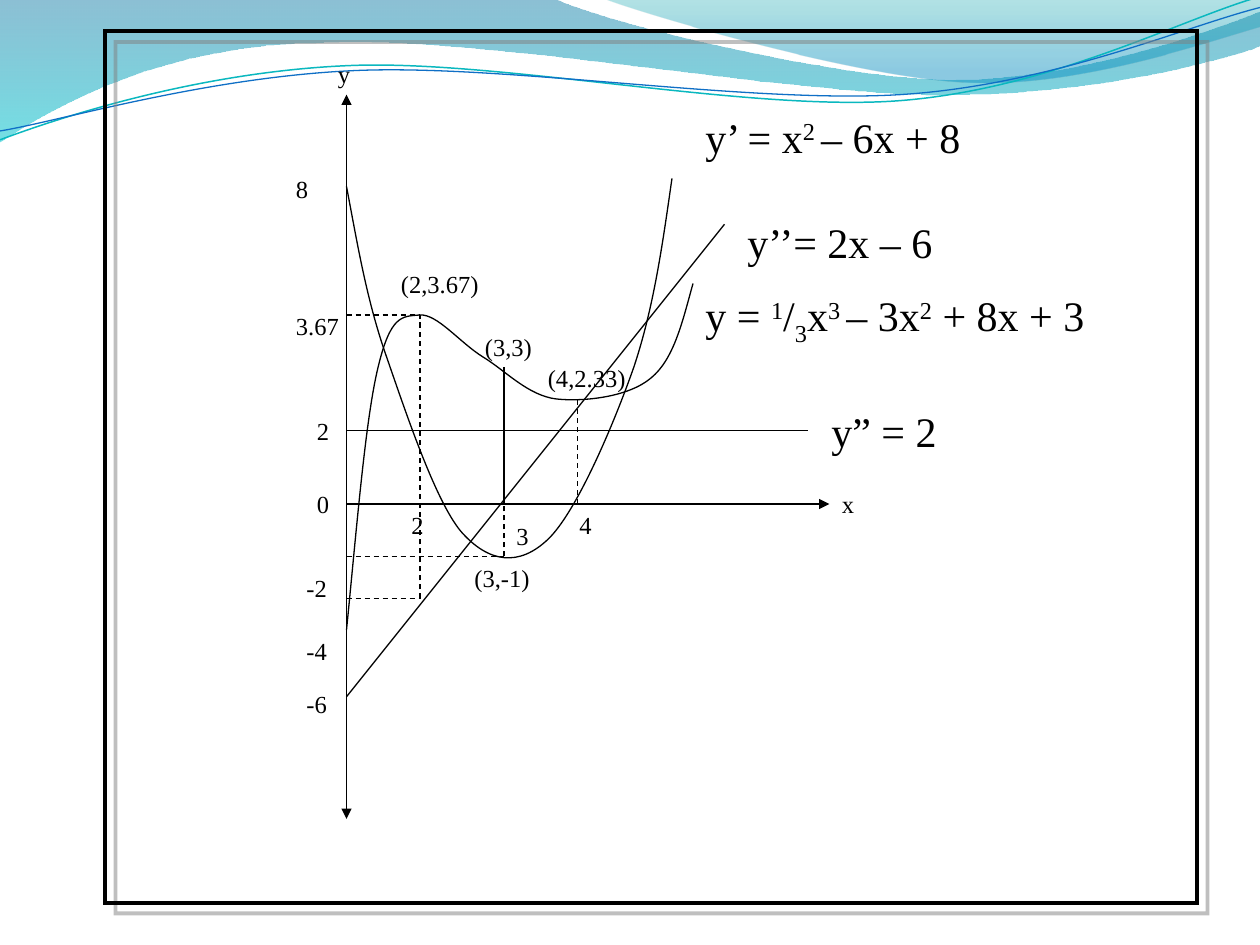
import math
import pptx
import pptx.util
import pptx.dml.color
import pptx.enum.dml
import pptx.enum.shapes
import pptx.enum.text
import pptx.oxml
import pptx.oxml.ns

Pt = pptx.util.Pt
RGB = pptx.dml.color.RGBColor.from_string
qn = pptx.oxml.ns.qn
space = pptx.oxml.ns.nsdecls("a")
theme = {
    "ink": "000000", "shade": "808080", "teal": "0AB8BF", "blue": "0F6FC6",
    "wave": [("0074A1", 0, 45), ("00C6CF", 1, 55)],
    "crest": [("00A1A9", 0, 30), ("008BBF", 0.8, 45)],
    "thin": 0.75, "thick": 2.25, "small": 14, "large": 24,
}
face = {"name": "Times New Roman", "bold": False, "italic": False}


def cm(inch):
    """Turn inches into a length, snapped to the grid of twelfths when close."""
    grid = round(inch * 12) / 12
    snap = grid if abs(grid - inch) < 0.004 else inch
    return pptx.util.Cm(round(snap * 2.54, 5) + 0.00001)


def trace(start, parts, closed=False, turn=0, mid=(0, 0)):
    """Outline of lines (2 numbers) and Bezier curves (6 numbers), turned about mid."""
    spots = [start] + [part[i:i + 2] for part in parts for i in range(0, len(part), 2)]
    c, s = math.cos(math.radians(turn)), math.sin(math.radians(turn))
    spots = [(cm(mid[0] + (x - mid[0]) * c + (y - mid[1]) * s),
              cm(mid[1] - (x - mid[0]) * s + (y - mid[1]) * c)) for x, y in spots]
    pen = slide.shapes.build_freeform(*spots[0])
    pen.add_line_segments(spots[1:], close=closed)
    shape = pen.convert_to_shape()
    shape.shadow.inherit = False
    shape.rotation = turn
    legs = iter(list(shape._element.iter(qn("a:lnTo"))))
    for part in parts:
        group = [next(legs) for i in range(0, len(part), 2)]
        if len(group) == 3:
            bend = pptx.oxml.parse_xml(f"<a:cubicBezTo {space}/>")
            group[0].addprevious(bend)
            for leg in group:
                bend.append(leg[0])
                leg.getparent().remove(leg)
    return shape


deck = pptx.Presentation()
deck.slide_width, deck.slide_height = cm(10), cm(7.5)
slide = deck.slides.add_slide(deck.slide_layouts[6])

# Filled waves along the top
waves = [
    ("wave", (0, -0.01), [
        (4.4, -0.01), (4.76, 0.17, 6.64, 0.63, 7.58, 0.63),
        (8.53, 0.63, 9.58, 0.26, 10, 0.09), (10.01, 0.36),
        (9.83, 0.44, 8.7, 0.76, 7.46, 0.75), (6.22, 0.75, 3.82, 0.28, 2.57, 0.34),
        (1.29, 0.35, 0.46, 0.83, -0.01, 1.13), (0, -0.01)]),
    ("crest", (4.79, -0.01), [
        (5.09, 0.11, 6.82, 0.62, 7.69, 0.65), (8.56, 0.69, 9.61, 0.32, 10, 0.21),
        (10, 0), (4.79, -0.01)]),
]
for tone, start, parts in waves:
    shape = trace(start, parts, True)
    shape.line.fill.background()
    shape.fill.gradient()
    shape.fill.gradient_angle = 270
    nodes = shape._element.spPr.iter(qn("a:gs"))
    for stop, node, (hue, place, alpha) in zip(shape.fill.gradient_stops, nodes, theme[tone]):
        stop.color.rgb = RGB(hue)
        stop.position = place
        node[0].append(pptx.oxml.parse_xml(f'<a:alpha {space} val="{alpha * 1000}"/>'))

# Wave lines and plotted curves
curves = [
    ("teal", 0.85, -2.7, (4.99, 0.58), (0, 1.11), [
        (0.48, 0.93, 1.58, 0.57, 2.77, 0.52), (3.95, 0.47, 5.93, 0.89, 7.13, 0.8),
        (8.33, 0.71, 9.38, 0.15, 9.98, -0.02)]),
    ("blue", 0.75, -2.7, (5, 0.59), (0, 1.04), [
        (0.47, 0.96, 1.64, 0.61, 2.83, 0.56), (4.03, 0.51, 5.97, 0.83, 7.17, 0.75),
        (8.36, 0.67, 9.41, 0.21, 10, 0.06)]),
    ("ink", theme["thin"], 0, (0, 0), (2.75, 1.48), [
        (2.83, 1.91, 2.9, 2.33, 3.05, 2.78), (3.21, 3.24, 3.45, 3.97, 3.66, 4.22),
        (3.88, 4.47, 4.12, 4.5, 4.35, 4.28), (4.57, 4.07, 4.86, 3.4, 5.03, 2.92),
        (5.19, 2.44, 5.26, 1.93, 5.33, 1.42)]),
    ("ink", theme["thin"], 0, (0, 0), (2.75, 5), [
        (2.83, 4.17, 2.9, 3.33, 3, 2.92), (3.1, 2.5, 3.19, 2.51, 3.33, 2.5),
        (3.47, 2.49, 3.65, 2.72, 3.83, 2.83), (4.01, 2.94, 4.19, 3.14, 4.42, 3.17),
        (4.64, 3.19, 4.99, 3.15, 5.17, 3), (5.35, 2.85, 5.42, 2.55, 5.5, 2.25)]),
]
for tone, width, turn, mid, start, parts in curves:
    shape = trace(start, parts, False, turn, mid)
    shape.fill.background()
    shape.line.color.rgb = RGB(theme[tone])
    shape.line.width = Pt(width)

# Axes, straight graphs and dashed guides
left, base = 2.75, 4
lines = [
    ((left, base), (6.58, base), "tail"),
    ((left, 0.75), (left, 6.5), "head tail"),
    ((left, 5.53), (5.75, 1.78), ""),
    ((left, 3.42), (6.42, 3.42), ""),
    ((4, base), (4, 2.92), ""),
    ((4, 4.42), (4, base), "dash"),
    ((left, 4.42), (4, 4.42), "dash"),
    ((left, 4.75), (3.33, 4.75), "dash"),
    ((3.33, 4.75), (3.33, 2.5), "dash"),
    ((left, 2.5), (3.33, 2.5), "dash"),
    ((4.58, base), (4.58, 3.17), "dash"),
]
for start, end, style in lines:
    link = slide.shapes.add_connector(
        pptx.enum.shapes.MSO_CONNECTOR.STRAIGHT, *map(cm, start + end))
    link.line.color.rgb = RGB(theme["ink"])
    link.line.width = Pt(theme["thin"])
    if style == "dash":
        link.line.dash_style = pptx.enum.dml.MSO_LINE.DASH
    spot = link._element.spPr
    for side in ("head", "tail"):
        if side in style:
            spot.find(qn("a:ln")).append(pptx.oxml.parse_xml(
                f'<a:{side}End {space} type="triangle"/>'))
    spot.append(pptx.oxml.parse_xml(f"<a:effectLst {space}/>"))

# Labels and formulas: a run is a text, or a text with its baseline shift
small = [
    (4, 4.08, 0.25, "3"), (3.17, 4, 0.25, "2"), (4.5, 4, 0.25, "4"),
    (2.33, 5, 0.42, "-4"), (2.33, 5.42, 0.42, "-6"), (2.33, 4.5, 0.42, "-2"),
    (2.42, 3.25, 0.33, "2"), (2.42, 3.83, 0.33, "0"), (2.25, 1.33, 0.42, "8"),
    (2.25, 2.42, 0.67, "3.67"), (6.58, 3.83, 0.25, "x"), (2.58, 0.42, 0.25, "y"),
    (3.67, 4.42, 0.67, "(3,-1)"), (3.75, 2.58, 0.67, "(3,3)"),
    (3.08, 2.08, 1.08, "(2,3.67)"), (4.25, 2.83, 0.92, "(4,2.33)"),
]
large = [
    (6.5, 3.17, 1.08, "y” = 2"),
    (5.83, 1.67, 1.75, "y’’= 2x – 6"),
    (5.5, 0.83, 2.5, "y’ = x", ("2 ", 30), "– 6x + 8"),
    (5.5, 2.25, 4, "y = ", ("1", 30), "/", ("3", -25), "x", ("3 ", 30),
     "– 3x", ("2", 30), " + 8x + 3"),
]
for size, tall, group in (("small", 0.33, small), ("large", 0.5, large)):
    for x, y, wide, *runs in group:
        frame = slide.shapes.add_textbox(cm(x), cm(y), cm(wide), cm(tall)).text_frame
        frame.word_wrap = True
        frame.auto_size = pptx.enum.text.MSO_AUTO_SIZE.SHAPE_TO_FIT_TEXT
        for piece in runs:
            words, shift = (piece, 0) if isinstance(piece, str) else piece
            run = frame.paragraphs[0].add_run()
            run.text = words
            for key, value in {**face, "size": Pt(theme[size])}.items():
                setattr(run.font, key, value)
            run.font.color.rgb = RGB(theme["ink"])
            if shift:
                run._r.get_or_add_rPr().set("baseline", str(shift * 1000))

# Frame with sharp corners and an offset shadow
box = slide.shapes.add_shape(
    pptx.enum.shapes.MSO_SHAPE.RECTANGLE, *map(cm, (0.83, 0.25, 8.67, 6.92)))
box.fill.background()
box.line.color.rgb = RGB(theme["ink"])
box.line.width = Pt(theme["thick"])
box._element.spPr.find(qn("a:ln")).append(
    pptx.oxml.parse_xml(f'<a:miter {space} lim="800000"/>'))
box.shadow.inherit = False
box._element.spPr.find(qn("a:effectLst")).append(pptx.oxml.parse_xml(
    f'<a:outerShdw {space} dist="{Pt(8.5)}" dir="2700000" '
    f'algn="ctr" rotWithShape="0"><a:srgbClr val="{theme["shade"]}">'
    '<a:alpha val="50000"/></a:srgbClr></a:outerShdw>'))

deck.save("out.pptx")
